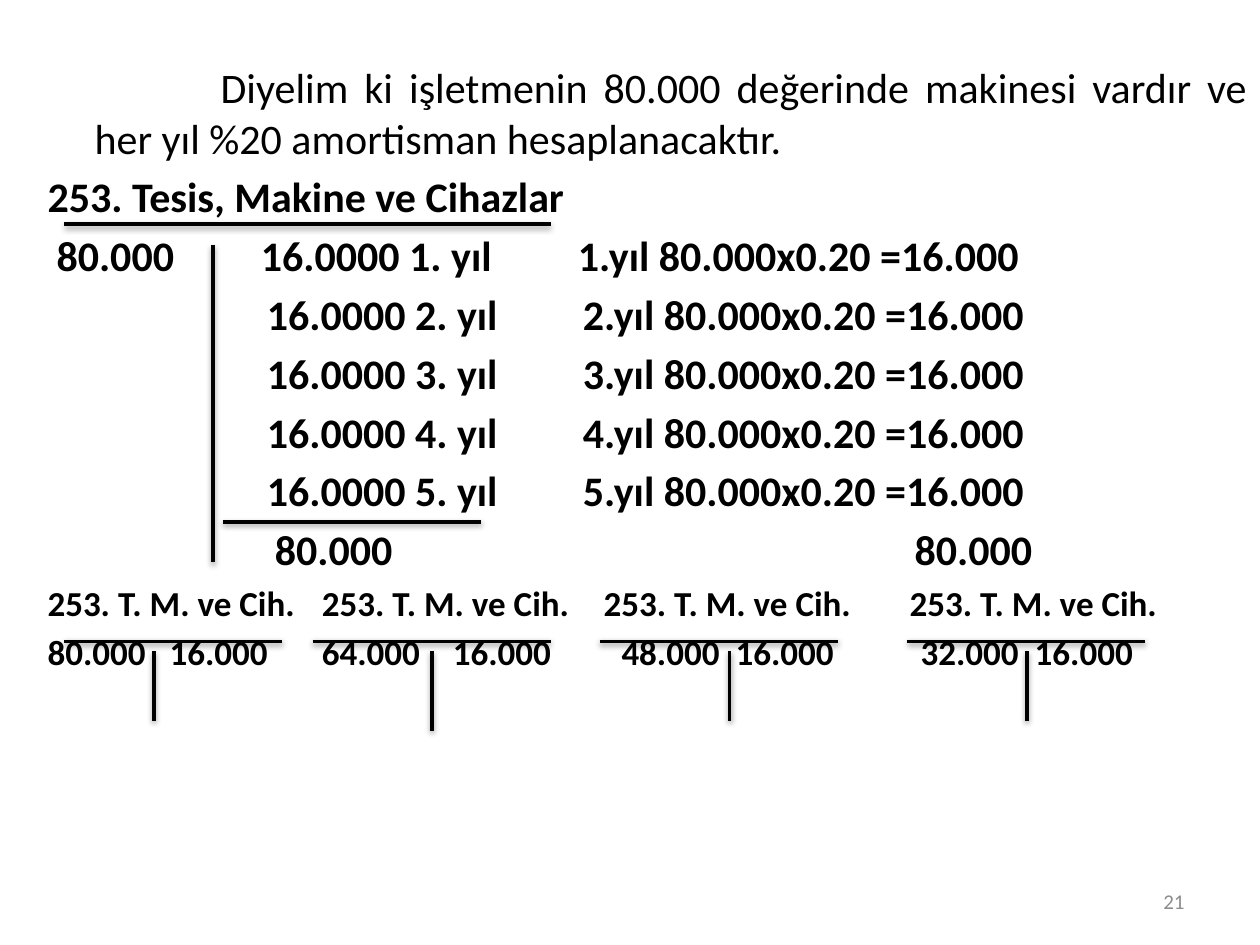
"""Build the depreciation slide with its T accounts."""
import pptx
import pptx.dml.color
import pptx.enum.shapes
import pptx.enum.text
import pptx.oxml
import pptx.oxml.ns
import pptx.util

Cm, Pt = pptx.util.Cm, pptx.util.Pt
ALIGN = pptx.enum.text.PP_ALIGN
ANCHOR = pptx.enum.text.MSO_ANCHOR
BLACK = pptx.dml.color.RGBColor(0, 0, 0)
GREY = pptx.dml.color.RGBColor(0x8C, 0x8C, 0x8C)
NS = pptx.oxml.ns.nsdecls("a")

INTRO = ("Diyelim ki işletmenin 80.000 değerinde makinesi vardır ve "
         "her yıl %20 amortisman hesaplanacaktır.")
TITLE = "253. Tesis, Makine ve Cihazlar"
COST, SHARE, SHORT = "80.000", "16.000", "253. T. M. ve Cih."
OPENING = ["80.000", "64.000", "48.000", "32.000"]
YEARS = range(1, 6)

FIRST_TABS = [0.18, 4.3, 10.69]
YEAR_TABS = [0.18, 4.42, 10.79]
TOTAL_TABS = [4.58, 17.48]
HEAD_TABS = [5.53, 11.21, 17.38]
SUM_TABS = [2.46, 5.53, 8.17, 11.57, 13.87, 17.6, 19.9]

MAIN_LINES = [(1.3, 4.52, 11.1, 4.52), (4.29, 4.93, 4.29, 11.33),
              (4.5, 10.52, 9.7, 10.52)]
BAR_Y, STEM_Y = 12.93, 13.13
ACCOUNTS = [(1.3, 5.69, 3.1, 14.53), (6.3, 11.1, 8.71, 14.73),
            (12.09, 16.89, 14.71, 14.53), (18.29, 23.09, 20.7, 14.53)]

SHADOW = (f'<a:effectLst {NS}><a:outerShdw blurRad="40000" dist="20000" '
          'dir="5400000" rotWithShape="0"><a:srgbClr val="000000">'
          '<a:alpha val="38000"/></a:srgbClr></a:outerShdw></a:effectLst>')


def write(para, text, size, color=BLACK, bold=False):
    run = para.add_run()
    run.text = text
    font = run.font
    font.name, font.size, font.bold = "Calibri", Pt(size), bold
    font.color.rgb = color


def set_tabs(para, tabs):
    stops = "".join(f'<a:tab pos="{Cm(t)}" algn="l"/>' for t in tabs)
    para._p.get_or_add_pPr().append(
        pptx.oxml.parse_xml(f"<a:tabLst {NS}>{stops}</a:tabLst>"))


def draw_line(slide, ends):
    line = slide.shapes.add_connector(
        pptx.enum.shapes.MSO_CONNECTOR.STRAIGHT, *map(Cm, ends))
    line.line.color.rgb = BLACK
    line.line.width = Pt(2)
    line._element.spPr.append(pptx.oxml.parse_xml(SHADOW))


def add_frame(slide, area, anchor):
    frame = slide.shapes.add_textbox(*map(Cm, area)).text_frame
    frame.word_wrap = True
    frame.vertical_anchor = anchor
    return frame


def fill_body(frame):
    intro = frame.paragraphs[0]
    intro.alignment = ALIGN.JUSTIFY
    intro.space_before = Pt(4.8)
    props = intro._p.get_or_add_pPr()
    props.set("marL", str(Cm(0.95)))
    props.set("indent", str(Cm(2.54)))
    write(intro, INTRO, 24)
    rows = [(TITLE, 24, ())]
    for year in YEARS:
        first = COST if year == 1 else ""
        cells = ["", first, f"16.0000 {year}. yıl",
                 f"{year}.yıl 80.000x0.20 =16.000"]
        tabs = FIRST_TABS if year == 1 else YEAR_TABS
        rows.append(("\t".join(cells), 24, tabs))
    sums = [f"{start}\t{SHARE}" for start in OPENING]
    rows += [(f"\t{COST}\t{COST}", 24, TOTAL_TABS),
             ("\t".join([SHORT] * len(OPENING)), 20, HEAD_TABS),
             ("\t".join(sums), 20, SUM_TABS)]
    for text, size, tabs in rows:
        para = frame.add_paragraph()
        para.alignment = ALIGN.LEFT
        para.space_before = Pt(size * 0.2)
        if tabs:
            set_tabs(para, tabs)
        write(para, text, size, bold=True)


def main():
    deck = pptx.Presentation()
    deck.slide_width, deck.slide_height = Cm(25.4), Cm(19.05)
    slide = deck.slides.add_slide(deck.slide_layouts[6])
    fill_body(add_frame(slide, (0.71, 1.12, 24.69, 16.2), ANCHOR.TOP))

    for ends in MAIN_LINES:
        draw_line(slide, ends)
    for left, right, stem, foot in ACCOUNTS:
        draw_line(slide, (left, BAR_Y, right, BAR_Y))
        draw_line(slide, (stem, STEM_Y, stem, foot))

    number = add_frame(slide, (18.2, 17.66, 5.93, 1.01), ANCHOR.MIDDLE)
    number.paragraphs[0].alignment = ALIGN.RIGHT
    write(number.paragraphs[0], "21", 12, GREY)
    deck.save("out.pptx")


if __name__ == "__main__":
    main()
